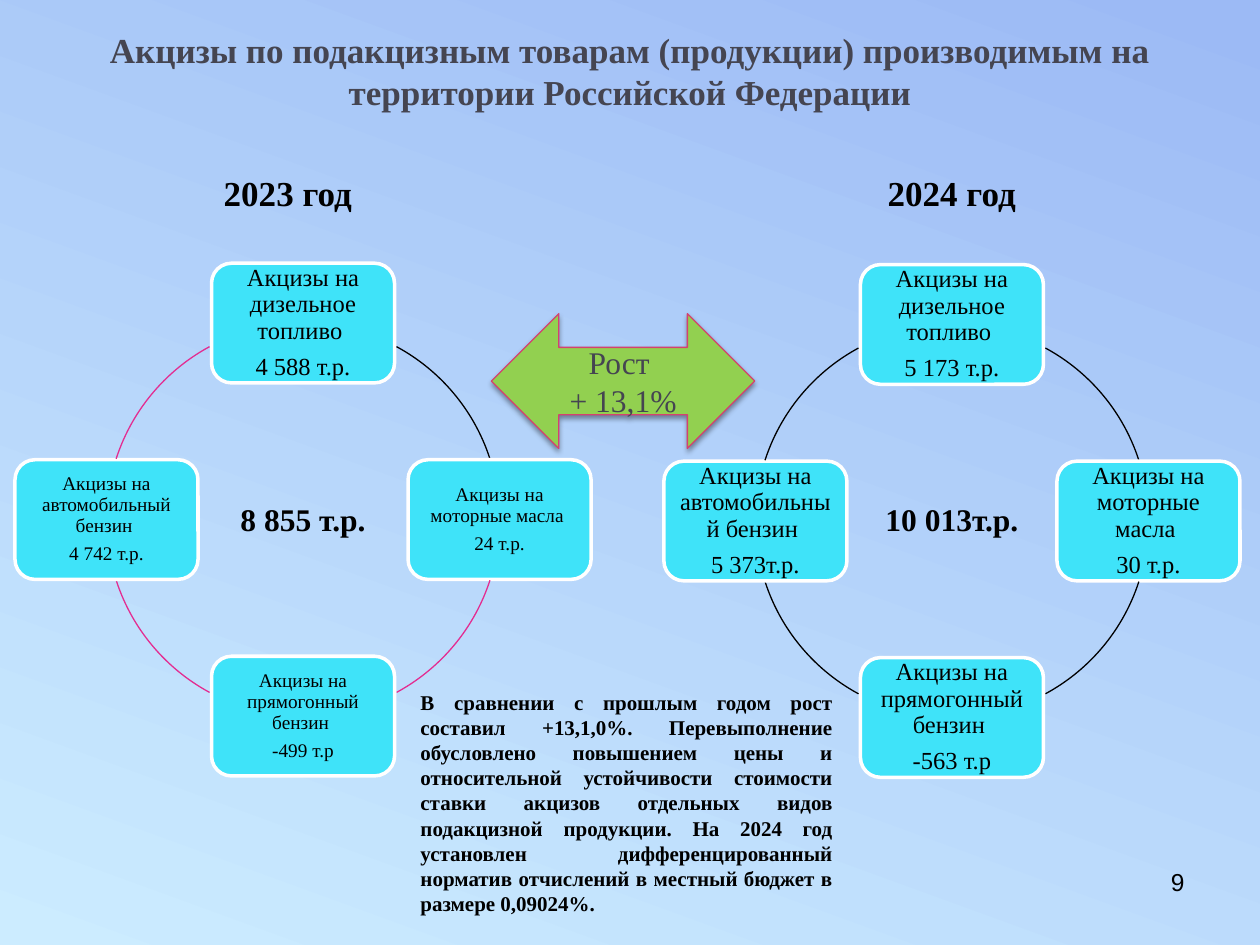
from lxml import etree
from pptx import Presentation
from pptx.dml.color import RGBColor
from pptx.enum.shapes import MSO_SHAPE as Kind
from pptx.enum.text import MSO_ANCHOR as Anchor, PP_ALIGN as Align
from pptx.oxml.ns import qn
from pptx.util import Pt

SERIF = "Times New Roman"
BLACK, GRAY, PINK = "000000", "454551", "E32D91"
CARD_W, CARD_H = 104.6, 68.4
GAP = 0.39  # space after a card line, as a share of its size


def rgb(code):
    return RGBColor.from_string(code)


def write(shape, lines, size, color=BLACK, bold=False, align=Align.CENTER,
          font=SERIF):
    frame = shape.text_frame
    frame.word_wrap = True
    frame.text = "\n".join(lines)
    for para in frame.paragraphs:
        para.alignment = align
        para.font.name, para.font.size = font, Pt(size)
        para.font.bold, para.font.color.rgb = bold, rgb(color)
    return frame


def add_text(slide, box, text, size, **style):
    shape = slide.shapes.add_textbox(*map(Pt, box))
    write(shape, [text], size, **style)


def add_shape(slide, kind, box, fill, line, width):
    """Add a flat shape; a fill of None leaves it open."""
    shape = slide.shapes.add_shape(kind, *map(Pt, box))
    shape.shadow.inherit = False
    if fill:
        shape.fill.solid()
        shape.fill.fore_color.rgb = rgb(fill)
    else:
        shape.fill.background()
    shape.line.color.rgb = rgb(line)
    shape.line.width = Pt(width)
    return shape


def add_card(slide, mid_x, mid_y, lines, size):
    box = (mid_x - CARD_W / 2, mid_y - CARD_H / 2, CARD_W, CARD_H)
    card = add_shape(slide, Kind.ROUNDED_RECTANGLE, box, "3FE3F9", "FFFFFF", 2)
    frame = write(card, lines, size)
    frame.vertical_anchor = Anchor.MIDDLE
    frame.margin_left = frame.margin_right = Pt(0.3 * size)
    frame.margin_top = frame.margin_bottom = Pt(0.3 * size)
    for para in frame.paragraphs:
        para.line_spacing = 0.9
        para.space_after = Pt(GAP * size)


def add_ring(slide, box, sums, sizes, arcs, total):
    """Four cards clockwise from the top, joined by arcs, around a total."""
    left, top, width, height = box
    mid_x, mid_y = left + width / 2, top + height / 2
    rad = (width - CARD_W) / 2
    names = ["дизельное топливо ", "моторные масла ",
             "прямогонный бензин ", "автомобильный бензин "]
    steps = [(0, -1), (1, 0), (0, 1), (-1, 0)]
    spans = [(298.4, 342), (18, 61.6), (118.4, 162), (198, 241.6)]
    circle = (mid_x - rad, mid_y - rad, 2 * rad, 2 * rad)
    for name, value, size, (dx, dy), span, color in zip(
            names, sums, sizes, steps, spans, arcs):
        add_card(slide, mid_x + dx * rad, mid_y + dy * rad,
                 ["Акцизы на " + name, value], size)
        arc = add_shape(slide, Kind.ARC, circle, None, color, 0.75)
        for i, angle in enumerate(span):
            arc.adjustments[i] = angle * 0.6  # 60000ths of a degree / 100000
    add_text(slide, (mid_x - 51, 282.2, 102, 29), total, 18, bold=True)


def add_growth(slide, box):
    arrow = add_shape(slide, Kind.LEFT_RIGHT_ARROW, box,
                      "92D050", "D4426F", 0.75)
    frame = write(arrow, ["Рост ", "+ 13,1%"], 18, GRAY)
    frame.vertical_anchor = Anchor.MIDDLE
    effects = arrow._element.spPr.find(qn("a:effectLst"))
    shadow = etree.SubElement(
        effects, qn("a:outerShdw"), blurRad=str(Pt(3.1)), dist=str(Pt(1.6)),
        dir="5400000", rotWithShape="0")
    tint = etree.SubElement(shadow, qn("a:srgbClr"), val=BLACK)
    etree.SubElement(tint, qn("a:alpha"), val="38000")


def set_title(slide, box, text):
    title = slide.shapes.title
    title.left, title.top, title.width, title.height = map(Pt, box)
    write(title, [text], 20, GRAY, bold=True).vertical_anchor = Anchor.MIDDLE


def set_back(slide):
    fill = slide.background.fill
    fill.gradient()
    fill.gradient_angle = 70
    for stop, color, place in zip(fill.gradient_stops,
                                  ["CCECFF", "9CBAF5"], [0, 0.99]):
        stop.color.rgb, stop.position = rgb(color), place


def main():
    deck = Presentation()
    deck.slide_width, deck.slide_height = Pt(720), Pt(540)
    slide = deck.slides.add_slide(deck.slide_layouts[5])
    set_back(slide)
    set_title(slide, (36, 9.4, 648, 61.2),
              "Акцизы по подакцизным товарам (продукции) производимым на "
              "территории Российской Федерации")
    add_text(slide, (516.2, 491.8, 167.8, 37.4), "9", 14,
             align=Align.RIGHT, font="Arial")
    add_growth(slide, (280.8, 179.3, 150.5, 77))
    add_ring(slide, (379.4, 151.2, 329.2, 293),
             ["5 173 т.р.", "30 т.р.", "-563 т.р", "5 373т.р."],
             [14] * 4, [BLACK] * 4, "10 013т.р.")
    for left, year in [(93.6, "2023 год"), (473, "2024 год")]:
        add_text(slide, (left, 94.3, 141.8, 31.7), year, 20, bold=True)
    add_text(slide, (233.2, 390.2, 249.8, 138.2),
             "В сравнении с прошлым годом рост составил +13,1,0%. "
             "Перевыполнение обусловлено повышением цены и относительной "
             "устойчивости стоимости ставки акцизов отдельных видов "
             "подакцизной продукции. На 2024 год установлен "
             "дифференцированный норматив отчислений в местный бюджет в "
             "размере 0,09024%.", 12, bold=True, align=Align.JUSTIFY)
    add_ring(slide, (8.6, 150.4, 329.2, 293),
             ["4 588 т.р.", "24 т.р.", "-499 т.р", "4 742 т.р."],
             [14, 11, 11, 11], [BLACK, PINK, PINK, PINK], "8 855 т.р.")
    deck.save("out.pptx")


if __name__ == "__main__":
    main()
